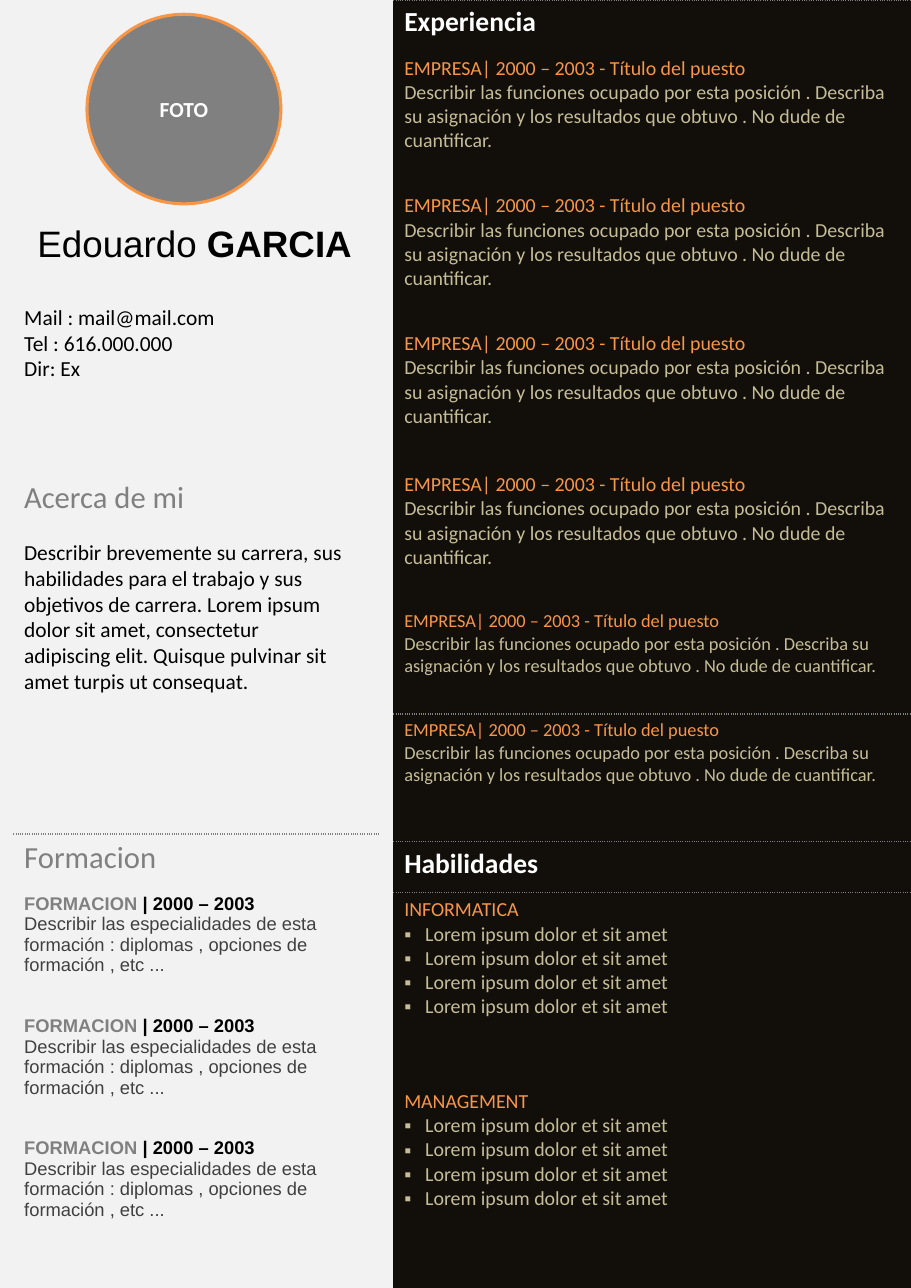
from lxml import etree
from pptx import Presentation
from pptx.dml.color import RGBColor
from pptx.enum.shapes import MSO_CONNECTOR, MSO_SHAPE
from pptx.enum.text import MSO_ANCHOR, MSO_AUTO_SIZE, PP_ALIGN
from pptx.oxml import parse_xml
from pptx.oxml.ns import qn
from pptx.util import Pt

LINE = MSO_CONNECTOR.STRAIGHT
RECT, OVAL = MSO_SHAPE.RECTANGLE, MSO_SHAPE.OVAL
TOP, MIDDLE = MSO_ANCHOR.TOP, MSO_ANCHOR.MIDDLE
LEFT, CENTER = PP_ALIGN.LEFT, PP_ALIGN.CENTER
FIXED = MSO_AUTO_SIZE.NONE

PX = 9144
WIDE, HIGH, SPLIT = 827, 1169, 357
NS = "http://schemas.openxmlformats.org/drawingml/2006/main"
PLAIN = "{2D5ABB26-0587-4C30-8999-92F81FD0307C}"
HUES = {
    "panel": "F2F2F2", "night": "120E0A", "gray": "808080", "rule": "7F7F7F",
    "orange": "F79646", "sand": "C4BD97", "white": "FFFFFF", "black": "000000",
    "dark": "404040",
}

JOB = "EMPRESA| 2000 – 2003 - Título del puesto"
DUTY = ("Describir las funciones ocupado por esta posición . Describa su asignación "
        "y los resultados que obtuvo . No dude de cuantificar.")
STUDY = ("Describir las especialidades de esta formación : diplomas , opciones de "
         "formación , etc ...")
ABOUT = ("Describir brevemente su carrera, sus habilidades para el trabajo y sus "
         "objetivos de carrera. Lorem ipsum dolor sit amet, consectetur adipiscing "
         "elit. Quisque pulvinar sit amet turpis ut consequat.")
SKILL = "Lorem ipsum dolor et sit amet"
MAIL = ["Mail : mail@mail.com", "Tel : 616.000.000", "Dir: Ex"]


def hue(name):
    return RGBColor.from_string(HUES[name])


def scale(*box):
    return [n * PX for n in box]


def place(shape, box):
    for key, size in zip(("left", "top", "width", "height"), scale(*box)):
        setattr(shape, key, size)


def run(text, size, color, bold=False, name="Calibri"):
    return text, color, {"size": Pt(size), "bold": bold, "name": name}


def write(frame, paras, mark=None, **form):
    for i, runs in enumerate(paras):
        para = frame.paragraphs[0] if i == 0 else frame.add_paragraph()
        if mark:
            mark(para, i)
        for key, value in form.items():
            setattr(para, key, value)
        for text, color, font in runs:
            piece = para.add_run()
            piece.text = text
            for key, value in font.items():
                setattr(piece.font, key, value)
            piece.font.color.rgb = hue(color)


def bullet(para, i):
    if i:
        props = para._p.get_or_add_pPr()
        props.set("marL", str(19 * PX))
        props.set("indent", str(-19 * PX))
        etree.SubElement(props, qn("a:buFont")).set("typeface", "Arial")
        etree.SubElement(props, qn("a:buChar")).set("char", "▪")


def flat(para, i):
    props = para._p.get_or_add_pPr()
    props.set("marL", "0")
    props.set("indent", "0")
    etree.SubElement(props, qn("a:buNone"))


def border(cell, sides):
    for i, side in enumerate(sides):
        cell._tc.get_or_add_tcPr().insert(i, parse_xml(
            f'<a:ln{side} xmlns:a="{NS}" w="12700"><a:solidFill>'
            f'<a:srgbClr val="{HUES["gray"]}"/></a:solidFill>'
            f'<a:prstDash val="sysDot"/></a:ln{side}>'))


def grid(slide, box, rows, fill=None):
    table = slide.shapes.add_table(len(rows), 1, *scale(*box)).table
    table.first_row = table.horz_banding = False
    table._tbl.tblPr.find(qn("a:tableStyleId")).text = PLAIN
    for i, (high, paras, sides, mark) in enumerate(rows):
        table.rows[i].height = high * PX
        cell = table.cell(i, 0)
        if fill:
            cell.fill.solid()
            cell.fill.fore_color.rgb = hue(fill)
        else:
            cell.fill.background()
        border(cell, sides)
        if not paras:
            cell.margin_top = cell.margin_bottom = 0
        write(cell.text_frame, paras, mark)


def work(slide, box):
    def head(text):
        return 46, [[run(text, 18, "white", True)]], "T", None

    def post(high, size, sides=""):
        paras = [[run(JOB, size, "orange")], [run(DUTY, size, "sand")]]
        return high, paras, sides, None

    def skill(high, name):
        paras = [[run(name, 13, "orange")]] + [[run(SKILL, 13, "sand")]] * 4
        return high, paras, "", bullet

    posts = [post(high, 13) for high in (125, 125, 128, 125)]
    rows = [head("Experiencia"), *posts, post(99, 12, "B"), post(116, 12, "TB"),
            head("Habilidades"), skill(174, "INFORMATICA"),
            skill(148, "MANAGEMENT"), (37, [], "", None)]
    grid(slide, box, rows, "night")


def school(slide, box):
    paras = [[run("FORMACION ", 12, "gray", True, "Arial"),
              run("| 2000 – 2003", 12, "black", True, "Arial")],
             [run(STUDY, 12, "dark", False, "Arial")]]
    head = 49, [[run("Formacion", 20, "gray")]], "T", None
    grid(slide, box, [head] + [(111, paras, "", None)] * 3)


def panel(slide, box):
    left, top, wide, high = box
    back = slide.shapes.add_shape(RECT, *scale(*box))
    back.shadow.inherit = False
    back.fill.solid()
    back.fill.fore_color.rgb = hue("panel")
    back.line.fill.background()
    back.element.getparent().insert(2, back.element)
    edge = left + wide
    rule = slide.shapes.add_connector(LINE, *scale(edge, top, edge, top + high))
    rule.line.color.rgb = hue("rule")
    rule.line.width = Pt(0.5)
    etree.SubElement(rule.element.spPr, qn("a:effectLst"))


def owner(slide, box):
    left, top = box[:2]
    title, body = slide.placeholders
    place(title, (left + 24, top + 195, 314, 50))
    place(body, (left + 12, top + 271, 332, 81))
    for shape, wrap, anchor in ((title, False, MIDDLE), (body, True, TOP)):
        frame = shape.text_frame
        frame.auto_size = FIXED
        frame.word_wrap = wrap
        frame.vertical_anchor = anchor
    write(title.text_frame, [[run("Edouardo ", 24, "black", False, "Arial"),
                              run("GARCIA", 24, "black", True, "Arial")]],
          alignment=LEFT)
    write(body.text_frame, [[run(text, 14, "black")] for text in MAIL], flat,
          space_before=Pt(0))


def about(slide, box):
    frame = slide.shapes.add_textbox(*scale(*box)).text_frame
    frame.word_wrap = True
    write(frame, [[run("Acerca de mi", 20, "gray")], [run(ABOUT, 14, "black")]])
    frame.paragraphs[1].space_before = Pt(16)


def photo(slide, box):
    disc = slide.shapes.add_shape(OVAL, *scale(*box))
    disc.shadow.inherit = False
    disc.fill.solid()
    disc.fill.fore_color.rgb = hue("gray")
    disc.line.color.rgb = hue("orange")
    disc.line.width = Pt(2)
    disc.text_frame.vertical_anchor = MIDDLE
    write(disc.text_frame, [[run("FOTO", 14, "white", True)]], alignment=CENTER)


def main():
    deck = Presentation()
    deck.slide_width, deck.slide_height = scale(WIDE, HIGH)
    slide = deck.slides.add_slide(deck.slide_layouts[1])
    side = (0, 0, SPLIT, HIGH)
    panel(slide, side)
    owner(slide, side)
    work(slide, (SPLIT, 0, WIDE - SPLIT, HIGH))
    school(slide, (12, 757, 332, 382))
    about(slide, (12, 429, 315, 207))
    photo(slide, (79, 13, 176, 172))
    deck.save("out.pptx")


if __name__ == "__main__":
    main()
